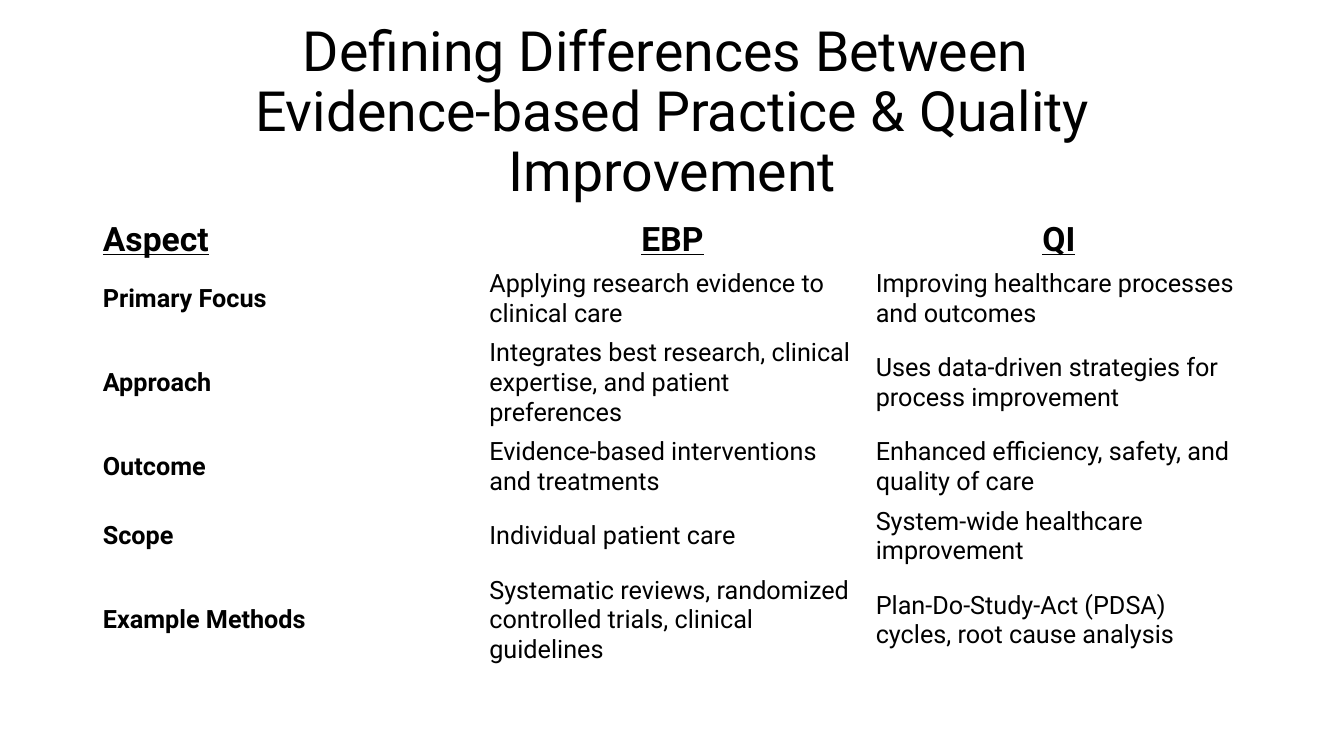
from pptx import Presentation
from pptx.dml.color import RGBColor
from pptx.enum.text import MSO_ANCHOR, MSO_AUTO_SIZE, PP_ALIGN
from pptx.util import Inches, Pt

TITLE = ["Defining Differences Between ",
         "Evidence-based Practice & Quality Improvement"]
ROWS = [
    ("Aspect", "EBP", "QI"),
    ("Primary Focus", "Applying research evidence to clinical care",
     "Improving healthcare processes and outcomes"),
    ("Approach", "Integrates best research, clinical expertise, and patient preferences",
     "Uses data-driven strategies for process improvement"),
    ("Outcome", "Evidence-based interventions and treatments",
     "Enhanced efficiency, safety, and quality of care"),
    ("Scope", "Individual patient care", "System-wide healthcare improvement"),
    ("Example Methods", "Systematic reviews, randomized controlled trials, clinical guidelines",
     "Plan-Do-Study-Act (PDSA) cycles, root cause analysis"),
]
ROW_HEIGHTS = [0.49, 0.68, 0.97, 0.68, 0.68, 0.97]
LEFT, WIDTH = 0.92, 11.5
FONT = "Roboto"
BLACK = RGBColor(0, 0, 0)


def write(tf, lines, size, bold=False, underline=False, align=PP_ALIGN.LEFT, spacing=None):
    p = tf.paragraphs[0]
    p.alignment = align
    p.line_spacing = spacing
    for i, line in enumerate(lines):
        if i:
            p.add_line_break()
        r = p.add_run()
        r.text = line
        r.font.name = FONT
        r.font.size = Pt(size)
        r.font.bold = bold
        r.font.underline = underline
        r.font.color.rgb = BLACK


def add_title(s):
    sp = s.shapes.title
    sp.left, sp.top = Inches(LEFT), Inches(0.4)
    sp.width, sp.height = Inches(WIDTH), Inches(1.45)
    tf = sp.text_frame
    tf.word_wrap = True
    tf.auto_size = MSO_AUTO_SIZE.NONE
    tf.vertical_anchor = MSO_ANCHOR.MIDDLE
    write(tf, TITLE, 39.6, align=PP_ALIGN.CENTER, spacing=0.9)


def add_comparison(s):
    table = s.shapes.add_table(len(ROWS), len(ROWS[0]), Inches(LEFT), Inches(2.13),
                               Inches(WIDTH), Inches(sum(ROW_HEIGHTS))).table
    table.first_row = False
    table.horz_banding = False
    for i, texts in enumerate(ROWS):
        table.rows[i].height = Inches(ROW_HEIGHTS[i])
        header = i == 0
        for j, text in enumerate(texts):
            cell = table.cell(i, j)
            cell.fill.background()
            cell.vertical_anchor = MSO_ANCHOR.MIDDLE
            write(cell.text_frame, [text], 24 if header else 18,
                  bold=header or j == 0, underline=header,
                  align=PP_ALIGN.CENTER if header and j else PP_ALIGN.LEFT)


def main():
    prs = Presentation()
    prs.slide_width, prs.slide_height = Inches(13.33), Inches(7.5)
    s = prs.slides.add_slide(prs.slide_layouts[5])
    add_title(s)
    add_comparison(s)
    prs.save("out.pptx")


if __name__ == "__main__":
    main()
